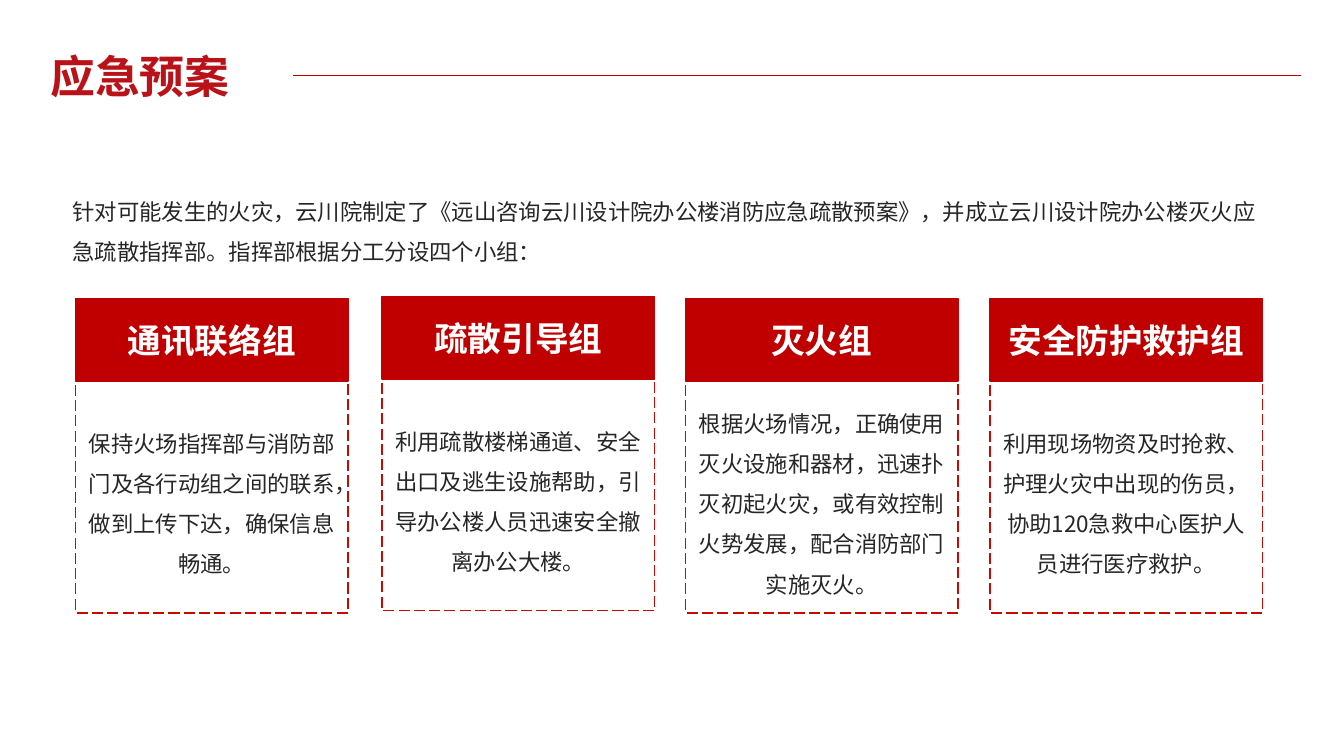
from dataclasses import dataclass

from lxml import etree
from pptx import Presentation
from pptx.dml.color import RGBColor
from pptx.enum.dml import MSO_LINE
from pptx.enum.shapes import MSO_CONNECTOR, MSO_SHAPE
from pptx.enum.text import MSO_ANCHOR, MSO_AUTO_SIZE, PP_ALIGN
from pptx.oxml.ns import qn
from pptx.util import Inches, Pt

ROUNDED = MSO_SHAPE.ROUNDED_RECTANGLE
STRAIGHT = MSO_CONNECTOR.STRAIGHT
LONG_DASH = MSO_LINE.LONG_DASH
MIDDLE = MSO_ANCHOR.MIDDLE
FIT_SHAPE = MSO_AUTO_SIZE.SHAPE_TO_FIT_TEXT
LEFT, CENTER, JUSTIFY = PP_ALIGN.LEFT, PP_ALIGN.CENTER, PP_ALIGN.JUSTIFY

INTRO = (
    "针对可能发生的火灾，云川院制定了《远山咨询云川设计院办公楼消防应急疏散预案》，"
    "并成立云川设计院办公楼灭火应急疏散指挥部。指挥部根据分工分设四个小组："
)
TEAMS = [
    (0.75, 2.96, "通讯联络组",
     "保持火场指挥部与消防部门及各行动组之间的联系，做到上传下达，确保信息畅通。"),
    (3.79, 2.94, "疏散引导组",
     "利用疏散楼梯通道、安全出口及逃生设施帮助，引导办公楼人员迅速安全撤离办公大楼。"),
    (6.8, 2.96, "灭火组",
     "根据火场情况，正确使用灭火设施和器材，迅速扑灭初起火灾，或有效控制火势发展，配合消防部门实施灭火。"),
    (9.82, 2.96, "安全防护救护组",
     "利用现场物资及时抢救、护理火灾中出现的伤员，协助120急救中心医护人员进行医疗救护。"),
]
CARD_WIDTH, HEADER_HEIGHT, BODY_HEIGHT = 2.7, 0.82, 2.3


@dataclass(frozen=True)
class Theme:
    red: RGBColor = RGBColor(0xC0, 0x00, 0x00)
    bright_red: RGBColor = RGBColor(0xC8, 0x09, 0x00)
    crimson: RGBColor = RGBColor(0xBA, 0x12, 0x19)
    ink: RGBColor = RGBColor(0x26, 0x26, 0x26)
    white: RGBColor = RGBColor(0xFF, 0xFF, 0xFF)
    text_font: str = "Noto Sans CJK SC"
    title_font: str = "Arial"
    title_size: int = 32
    header_size: int = 24
    body_size: int = 16
    body_spacing: float = 1.5


class SlideBuilder:
    def __init__(self, page, theme):
        self.page = page
        self.theme = theme

    def set_text(self, box, text, size, color, align, bold=False, spacing=None):
        frame = box.text_frame
        frame.word_wrap = True
        para = frame.paragraphs[0]
        para.text = text
        para.alignment = align
        para.line_spacing = spacing
        font = para.font
        font.size = Pt(size)
        font.bold = bold
        font.name = self.theme.text_font
        font.color.rgb = color
        properties = para._p.pPr.find(qn("a:defRPr"))
        east_asian = etree.SubElement(properties, qn("a:ea"))
        east_asian.set("typeface", self.theme.text_font)
        return font

    def text_box(self, left, top, width, height, text, size, color, align, **style):
        box = self.page.shapes.add_textbox(
            Inches(left), Inches(top), Inches(width), Inches(height))
        font = self.set_text(box, text, size, color, align, **style)
        box.text_frame.auto_size = FIT_SHAPE
        return font

    def title(self, text):
        theme = self.theme
        font = self.text_box(0.4, 0.43, 2.51, 0.64, text, theme.title_size,
                             theme.crimson, JUSTIFY, bold=True)
        font.name = theme.title_font
        font.fill.gradient()
        font.fill.gradient_angle = 90
        start, end = font.fill.gradient_stops
        start.color.rgb, start.position = theme.crimson, 0
        end.color.rgb, end.position = theme.bright_red, 0.98

    def rule(self, left, right, top):
        line = self.page.shapes.add_connector(
            STRAIGHT, Inches(left), Inches(top), Inches(right), Inches(top))
        line.line.color.rgb = self.theme.red
        line.line.width = Pt(0.5)
        etree.SubElement(line._element.spPr, qn("a:effectLst"))

    def panel(self, left, top, height, line_color):
        box = self.page.shapes.add_shape(
            ROUNDED, Inches(left), Inches(top), Inches(CARD_WIDTH), Inches(height))
        box.adjustments[0] = 0
        box.shadow.inherit = False
        box.fill.background()
        box.line.color.rgb = line_color
        box.line.width = Pt(1)
        box.text_frame.vertical_anchor = MIDDLE
        return box

    def card(self, left, top, heading, duty):
        theme = self.theme
        body = self.panel(left, top + HEADER_HEIGHT, BODY_HEIGHT, theme.bright_red)
        body.line.dash_style = LONG_DASH
        self.set_text(body, duty, theme.body_size, theme.ink, CENTER,
                      spacing=theme.body_spacing)
        header = self.panel(left, top, HEADER_HEIGHT, theme.red)
        header.fill.solid()
        header.fill.fore_color.rgb = theme.red
        self.set_text(header, heading, theme.header_size, theme.white, CENTER, bold=True)


def main():
    deck = Presentation()
    deck.slide_width, deck.slide_height = Inches(13.33), Inches(7.5)
    theme = Theme()
    builder = SlideBuilder(deck.slides.add_slide(deck.slide_layouts[6]), theme)
    builder.text_box(0.62, 1.78, 11.98, 0.86, INTRO, theme.body_size, theme.ink,
                     LEFT, spacing=theme.body_spacing)
    for team in TEAMS:
        builder.card(*team)
    builder.title("应急预案")
    builder.rule(2.91, 12.9, 0.75)
    deck.save("out.pptx")


if __name__ == "__main__":
    main()
